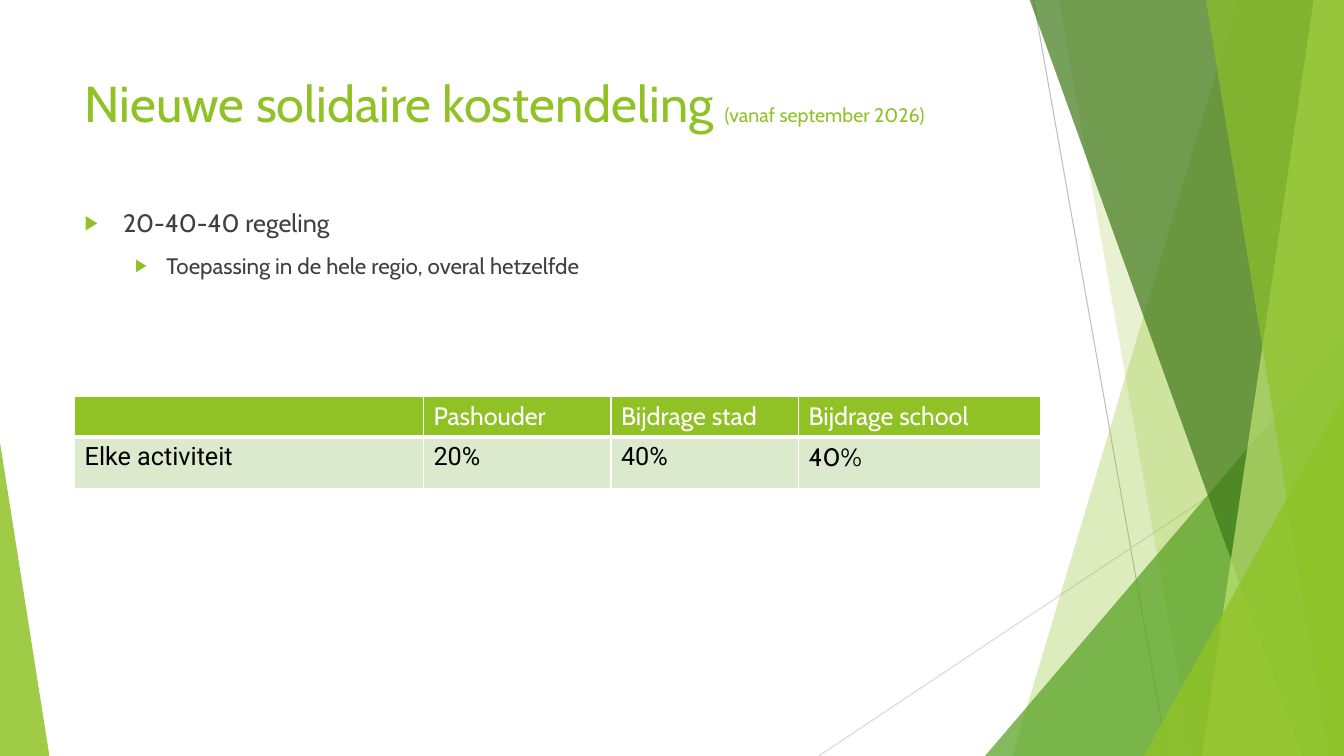
from dataclasses import dataclass

from lxml.etree import SubElement
from pptx import Presentation
from pptx.dml.color import RGBColor
from pptx.enum.shapes import MSO_CONNECTOR, MSO_SHAPE
from pptx.enum.text import MSO_ANCHOR, MSO_AUTO_SIZE, PP_ALIGN
from pptx.oxml.ns import qn
from pptx.util import Inches, Pt

# Content
TITLE = [("Nieuwe solidaire kostendeling ", 36), ("(vanaf september 2026)", 14)]
# text, size, left indent, hanging indent
BULLETS = [
    ("20-40-40 regeling", 18, 0.38, 0.38),
    ("Toepassing in de hele regio, overal hetzelfde", 16, 0.81, 0.31),
]
COST_ROWS = [
    ["", "Pashouder", "Bijdrage stad", "Bijdrage school"],
    ["Elke activiteit", "20%", "40%", "40%"],
]
COLUMN_WIDTHS = [3.46, 1.86, 1.86, 2.4]
ROW_HEIGHTS = [0.4, 0.51]


@dataclass(frozen=True)
class Theme:
    green: str = "90C226"
    mid_green: str = "54A021"
    dark_green: str = "3F7819"
    light_green: str = "C0E474"
    row_tint: str = "DBE9CD"
    text: str = "404040"
    black: str = "000000"
    white: str = "FFFFFF"
    line_dark: str = "BFBFBF"
    line_light: str = "D9D9D9"
    font: str = "Cabin"
    cell_font: str = "Roboto"
    table_size: int = 18


THEME = Theme()
WIDTH, HEIGHT = 13.33, 7.5
LEFT = 0.74
BAND_TOP = -0.01

# Decoration: start, end, colour
LINES = [
    ((10.25, 0), (11.58, HEIGHT), THEME.line_dark),
    ((WIDTH, 4.03), (8.12, HEIGHT), THEME.line_light),
]
# Bands reach the right edge: top x, bottom x, colour, opacity
BACK_BANDS = [(12.28, 10.04, THEME.green, 30), (10.5, 11.83, THEME.green, 20)]
FRONT_BANDS = [
    (10.21, 12.91, THEME.dark_green, 70),
    (13.03, 11.92, THEME.light_green, 70),
    (11.96, 13.18, THEME.green, 65),
]
# Triangles stand on the bottom edge: left, top, width, apex, colour, opacity
MIDDLE_TRIANGLE = (9.77, 3.33, 3.56, 1, THEME.mid_green, 72)
FRONT_TRIANGLES = [
    (11.34, 3.93, 1.99, 1, THEME.green, 80),
    (0, 4.39, 0.49, 0, THEME.green, 85),
]


def fill_glass(shape, color, opacity):
    shape.shadow.inherit = False
    shape.line.fill.background()
    shape.fill.solid()
    shape.fill.fore_color.rgb = RGBColor.from_string(color)
    swatch = shape.fill._xPr.find(qn("a:solidFill"))[0]
    SubElement(swatch, qn("a:alpha"), val=str(opacity * 1000))


def add_line(page, start, end, color):
    line = page.shapes.add_connector(
        MSO_CONNECTOR.STRAIGHT, *map(Inches, start + end))
    line.line.color.rgb = RGBColor.from_string(color)
    line.line.width = Pt(0.75)
    SubElement(line.element.spPr, qn("a:effectLst"))


def add_band(page, top_x, bottom_x, color, opacity):
    corners = [(top_x, BAND_TOP), (WIDTH, BAND_TOP), (WIDTH, HEIGHT), (bottom_x, HEIGHT)]
    points = [(Inches(x), Inches(y)) for x, y in corners]
    builder = page.shapes.build_freeform(*points[0])
    builder.add_line_segments(points[1:], close=True)
    fill_glass(builder.convert_to_shape(), color, opacity)


def add_triangle(page, left, top, width, apex, color, opacity):
    triangle = page.shapes.add_shape(
        MSO_SHAPE.ISOSCELES_TRIANGLE,
        Inches(left), Inches(top), Inches(width), Inches(HEIGHT - top))
    triangle.adjustments[0] = apex
    fill_glass(triangle, color, opacity)


def style_span(span, size, color, font=THEME.font):
    span.font.size = Pt(size)
    span.font.name = font
    span.font.bold = False
    span.font.color.rgb = RGBColor.from_string(color)


def place(page, box, top, height):
    box.left, box.top = Inches(LEFT), Inches(top)
    box.width, box.height = Inches(9.4), Inches(height)
    box.text_frame.word_wrap = True
    box.text_frame.auto_size = MSO_AUTO_SIZE.NONE
    box.text_frame.vertical_anchor = MSO_ANCHOR.TOP
    page.shapes.element.append(box.element)  # in front of the decoration


def set_bullet(para, left, hanging):
    properties = para._p.get_or_add_pPr()
    properties.set("marL", str(Inches(left)))
    properties.set("indent", str(-Inches(hanging)))
    bullet_color = SubElement(properties, qn("a:buClr"))
    SubElement(bullet_color, qn("a:srgbClr"), val=THEME.green)
    SubElement(properties, qn("a:buSzPct"), val="80000")
    SubElement(properties, qn("a:buFont"), typeface="Arial")
    SubElement(properties, qn("a:buChar"), char="▶")


def style_cell(cell, is_header, font):
    properties = cell._tc.get_or_add_tcPr()
    bottom = 3 if is_header else 1
    for side, width in (("L", 1), ("R", 1), ("T", 1), ("B", bottom)):
        edge = SubElement(properties, qn(f"a:ln{side}"), w=str(Pt(width)))
        paint = SubElement(edge, qn("a:solidFill"))
        SubElement(paint, qn("a:srgbClr"), val=THEME.white)
    cell.fill.solid()
    cell.fill.fore_color.rgb = RGBColor.from_string(
        THEME.green if is_header else THEME.row_tint)
    color = THEME.white if is_header else THEME.black
    para = cell.text_frame.paragraphs[0]
    para.font.size = Pt(THEME.table_size)
    for span in para.runs:
        style_span(span, THEME.table_size, color, font)


def main():
    deck = Presentation()
    deck.slide_width, deck.slide_height = Inches(WIDTH), Inches(HEIGHT)
    page = deck.slides.add_slide(deck.slide_layouts[1])

    # Decoration, back to front
    for line in LINES:
        add_line(page, *line)
    for band in BACK_BANDS:
        add_band(page, *band)
    add_triangle(page, *MIDDLE_TRIANGLE)
    for band in FRONT_BANDS:
        add_band(page, *band)
    for triangle in FRONT_TRIANGLES:
        add_triangle(page, *triangle)

    # Title
    title = page.shapes.title
    body = page.placeholders[1]
    place(page, title, 0.67, 0.94)
    heading = title.text_frame.paragraphs[0]
    heading.alignment = PP_ALIGN.LEFT
    for text, size in TITLE:
        span = heading.add_run()
        span.text = text
        style_span(span, size, THEME.green)

    # Bullets
    place(page, body, 2.01, 4.24)
    body.text_frame.text = "\n".join(bullet[0] for bullet in BULLETS)
    for level, (para, bullet) in enumerate(zip(body.text_frame.paragraphs, BULLETS)):
        _, size, left, hanging = bullet
        para.level = level
        para.space_before = Pt(10)
        set_bullet(para, left, hanging)
        style_span(para.runs[0], size, THEME.text)

    # Cost table
    table = page.shapes.add_table(
        len(COST_ROWS), len(COLUMN_WIDTHS), Inches(LEFT), Inches(3.93),
        Inches(sum(COLUMN_WIDTHS)), Inches(sum(ROW_HEIGHTS))).table
    table.horz_banding = False
    for column, width in zip(table.columns, COLUMN_WIDTHS):
        column.width = Inches(width)
    for r, (values, height) in enumerate(zip(COST_ROWS, ROW_HEIGHTS)):
        table.rows[r].height = Inches(height)
        for c, value in enumerate(values):
            cell = table.cell(r, c)
            cell.text_frame.text = value
            is_header = r == 0
            is_last = c == len(values) - 1
            style_cell(cell, is_header,
                       THEME.font if is_header or is_last else THEME.cell_font)

    deck.save("out.pptx")


if __name__ == "__main__":
    main()
